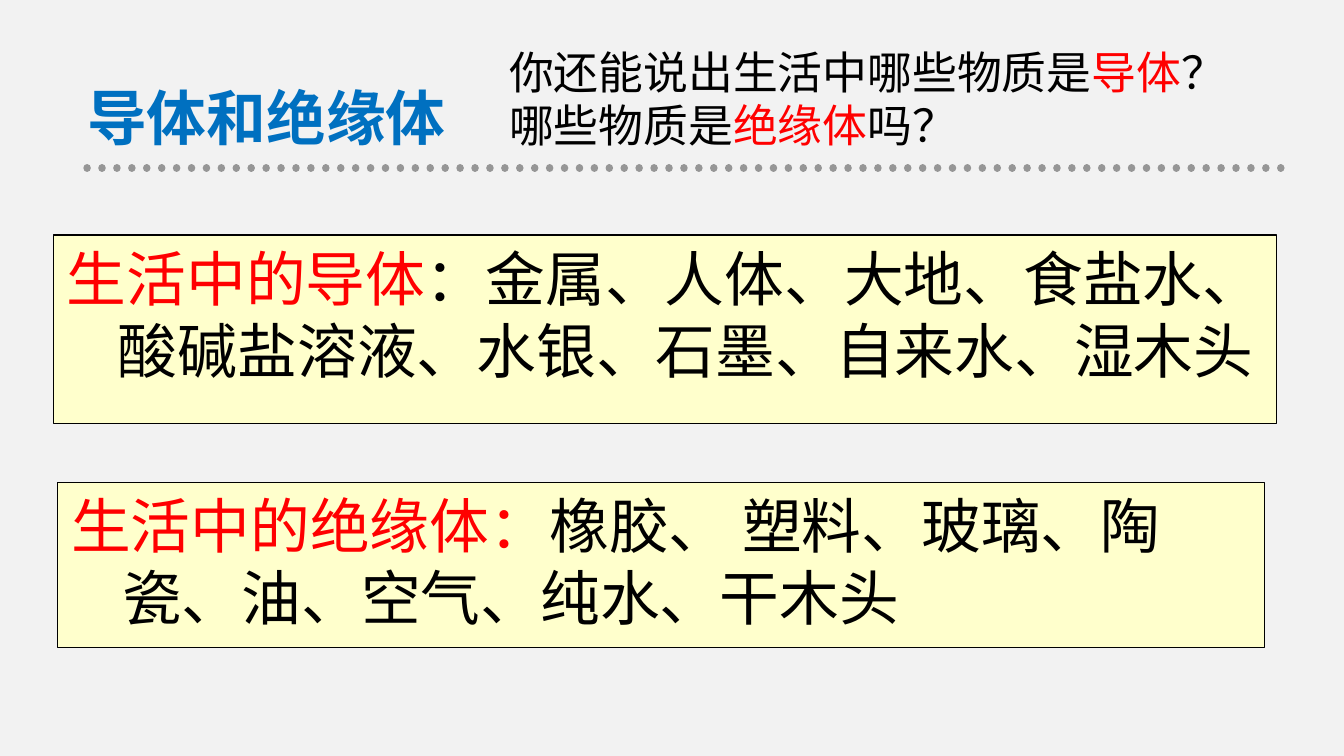
from pptx import Presentation
from pptx.dml.color import RGBColor
from pptx.enum.dml import MSO_LINE
from pptx.enum.shapes import MSO_CONNECTOR, MSO_SHAPE
from pptx.enum.text import MSO_ANCHOR, PP_ALIGN
from pptx.oxml.ns import qn
from pptx.util import Inches, Pt
from lxml.etree import SubElement

FONT = "Noto Sans CJK SC"
COLORS = {
    "background": "F2F2F2",
    "title": "0070C0",
    "body": "000000",
    "key": "FF0000",
    "panel": "FFFFCC",
    "divider": "969696",
}


def color(name):
    return RGBColor.from_string(COLORS[name])


def write_text(shape, parts, size, bold=False):
    """Fill the shape with one paragraph made of (text, color name) parts."""
    text_frame = shape.text_frame
    text_frame.word_wrap = True
    text_frame.vertical_anchor = MSO_ANCHOR.TOP
    paragraph = text_frame.paragraphs[0]
    paragraph.alignment = PP_ALIGN.LEFT
    paragraph.line_spacing = Pt(size * 1.2)
    for text, color_name in parts:
        run = paragraph.add_run()
        run.text = text
        run.font.size = Pt(size)
        run.font.bold = bold
        run.font.color.rgb = color(color_name)
        run.font.name = FONT
        SubElement(run.font._element, qn("a:ea"), typeface=FONT)
    return paragraph


def add_text(slide, box, parts, size, bold=False):
    shape = slide.shapes.add_textbox(*map(Inches, box))
    write_text(shape, parts, size, bold)


def add_divider(slide, left, top, width):
    divider = slide.shapes.add_connector(
        MSO_CONNECTOR.STRAIGHT,
        Inches(left + width), Inches(top), Inches(left), Inches(top),
    )
    divider.line.color.rgb = color("divider")
    divider.line.width = Pt(4)
    divider.line.dash_style = MSO_LINE.ROUND_DOT
    divider.line._ln.set("cap", "rnd")
    SubElement(divider._element.spPr, qn("a:effectLst"))


def add_header(slide, left, top):
    add_divider(slide, left + 0.07, top + 0.97, 8.91)
    add_text(slide, (left, top + 0.27, 4.06, 0.64),
             [("导体和绝缘体", "title")], 32, bold=True)
    question = [
        ("你还能说出生活中哪些物质是", "body"),
        ("导体", "key"),
        ("？哪些物质是", "body"),
        ("绝缘体", "key"),
        ("吗？", "body"),
    ]
    add_text(slide, (left + 3.14, top, 5.55, 0.91), question, 24)


def add_panel(slide, box, label, examples):
    panel = slide.shapes.add_shape(MSO_SHAPE.RECTANGLE, *map(Inches, box))
    panel.shadow.inherit = False
    panel.fill.solid()
    panel.fill.fore_color.rgb = color("panel")
    panel.line.color.rgb = color("body")
    panel.line.width = Pt(0.75)
    paragraph = write_text(panel, [(label, "key"), (examples, "body")], 32)
    indent = Inches(0.38)
    properties = paragraph._p.get_or_add_pPr()
    properties.set("marL", str(indent))
    properties.set("indent", str(-indent))
    properties.set("hangingPunct", "0")


def main():
    presentation = Presentation()
    presentation.slide_width = Inches(10)
    presentation.slide_height = Inches(10) * 9 // 16
    slide = presentation.slides.add_slide(presentation.slide_layouts[6])
    slide.background.fill.solid()
    slide.background.fill.fore_color.rgb = color("background")

    add_header(slide, 0.55, 0.28)
    add_panel(slide, (0.4, 1.75, 9.1, 1.4), "生活中的导体",
              "：金属、人体、大地、食盐水、 酸碱盐溶液、水银、石墨、自来水、湿木头")
    add_panel(slide, (0.43, 3.59, 8.98, 1.23), "生活中的绝缘体：",
              "橡胶、 塑料、玻璃、陶瓷、油、空气、纯水、干木头")
    presentation.save("out.pptx")


if __name__ == "__main__":
    main()
